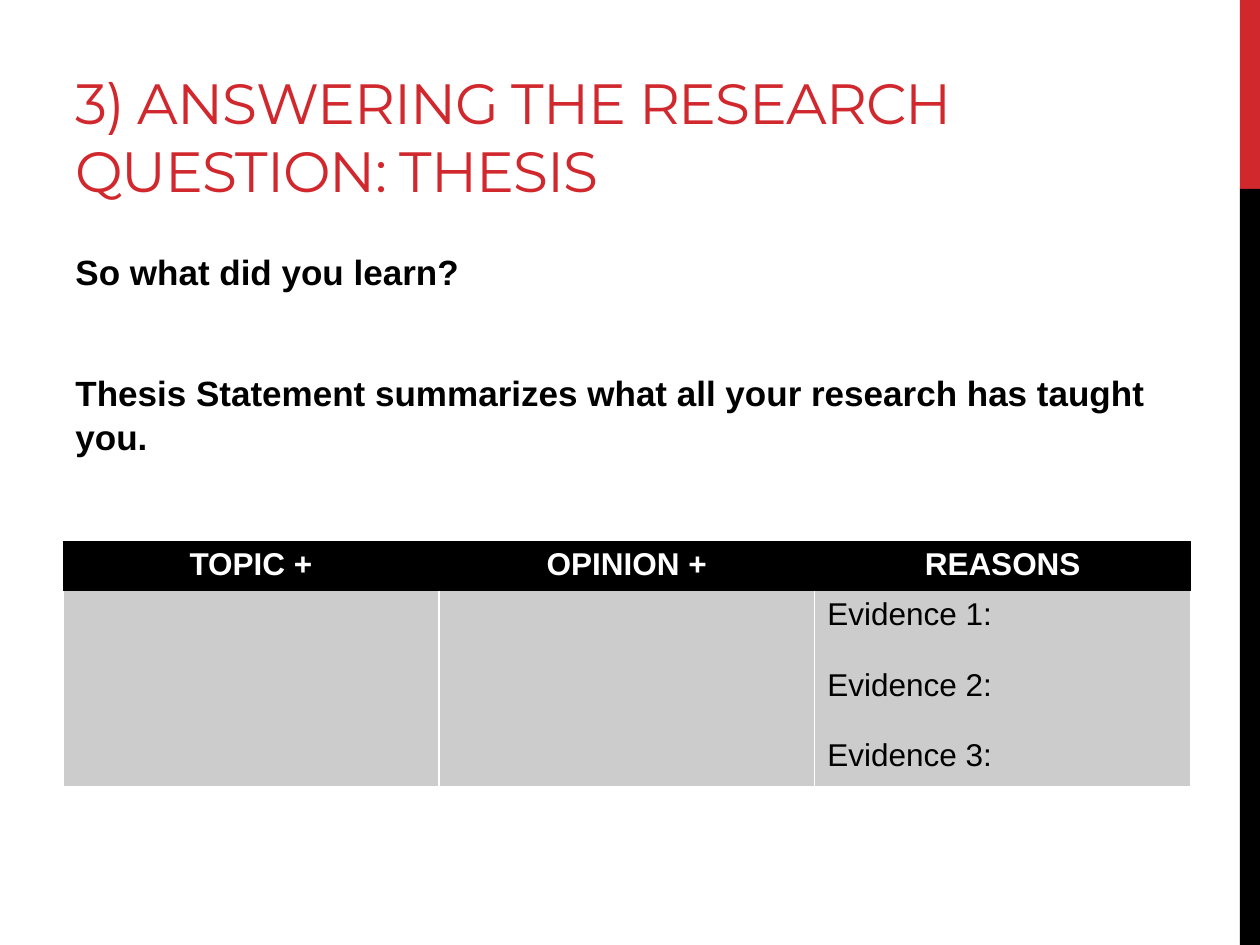
from lxml import etree
from pptx import Presentation
from pptx.dml.color import RGBColor
from pptx.enum import shapes, text
from pptx.oxml import ns
from pptx.util import Inches, Pt

RED = RGBColor(0xD1, 0x28, 0x2E)
BLACK = RGBColor(0, 0, 0)
WHITE = RGBColor(0xFF, 0xFF, 0xFF)
GRAY = RGBColor(0xCC, 0xCC, 0xCC)
NO_STYLE = "{2D5ABB26-0587-4C30-8999-92F81FD0307C}"

TITLE = "3) ANSWERING THE RESEARCH QUESTION: THESIS"
BODY = [
    "So what did you learn?",
    "Thesis Statement summarizes what all your research has taught you.",
]
HEADERS = ["TOPIC +", "OPINION +", "REASONS"]
CELLS = ["", "", "Evidence 1:\nEvidence 2:\nEvidence 3:"]


def fill_text(text_frame, content, size, color, font="Arial", bold=False, gap=0):
    """Write one paragraph per line, with gap points between paragraphs."""
    text_frame.text = content
    for index, paragraph in enumerate(text_frame.paragraphs):
        paragraph.font.size = Pt(size)
        if index:
            paragraph.space_before = Pt(gap)
        for run in paragraph.runs:
            run.font.name = font
            run.font.size = Pt(size)
            run.font.bold = bold
            run.font.color.rgb = color


def add_bar(slide, top, height, color):
    bar = slide.shapes.add_shape(
        shapes.MSO_SHAPE.RECTANGLE,
        Inches(9.84), Inches(top), Inches(0.16), Inches(height))
    bar.shadow.inherit = False
    bar.fill.solid()
    bar.fill.fore_color.rgb = color
    bar.line.fill.background()


def add_text_box(slide, left, top, width, height):
    box = slide.shapes.add_textbox(
        Inches(left), Inches(top), Inches(width), Inches(height))
    box.text_frame.word_wrap = True
    return box.text_frame


def add_title(slide):
    frame = add_text_box(slide, 0.5, 0.17, 8.33, 1.5)
    frame.vertical_anchor = text.MSO_ANCHOR.BOTTOM
    fill_text(frame, TITLE, 32.4, RED, font="Montserrat")
    frame.paragraphs[0].runs[0].font._element.set("spc", "-60")


def add_body(slide):
    frame = add_text_box(slide, 0.5, 1.92, 8.95, 2.2)
    fill_text(frame, "\n".join(BODY), 20, BLACK, bold=True, gap=44)
    for paragraph in frame.paragraphs:
        paragraph.line_spacing = 1.05


def add_border(cell, sides, color):
    properties = cell._tc.get_or_add_tcPr()
    for side in sides:
        line = etree.SubElement(properties, ns.qn(f"a:ln{side}"), w=str(Pt(1)))
        solid = etree.SubElement(line, ns.qn("a:solidFill"))
        etree.SubElement(solid, ns.qn("a:srgbClr"), val=str(color))


def fill_cell(cell, color):
    cell.fill.solid()
    cell.fill.fore_color.rgb = color


def add_thesis_table(slide):
    table = slide.shapes.add_table(
        2, len(HEADERS), Inches(0.5), Inches(4.29),
        Inches(8.95), Inches(1.9)).table
    table._tbl.tblPr.find(ns.qn("a:tableStyleId")).text = NO_STYLE
    table.rows[0].height = Inches(0.4)
    table.rows[1].height = Inches(1.5)
    for column, (header, content) in enumerate(zip(HEADERS, CELLS)):
        top, bottom = table.cell(0, column), table.cell(1, column)
        fill_text(top.text_frame, header, 18, WHITE, bold=True)
        top.text_frame.paragraphs[0].alignment = text.PP_ALIGN.CENTER
        fill_cell(top, BLACK)
        fill_text(bottom.text_frame, content, 18, BLACK, gap=20)
        add_border(bottom, "LRB", WHITE)
        fill_cell(bottom, GRAY)


def main():
    presentation = Presentation()
    presentation.slide_width = Inches(10)
    presentation.slide_height = Inches(7.5)
    slide = presentation.slides.add_slide(presentation.slide_layouts[6])
    add_bar(slide, 0, 1.5, RED)
    add_bar(slide, 1.5, 6, BLACK)
    add_title(slide)
    add_body(slide)
    add_thesis_table(slide)
    presentation.save("out.pptx")


if __name__ == "__main__":
    main()
